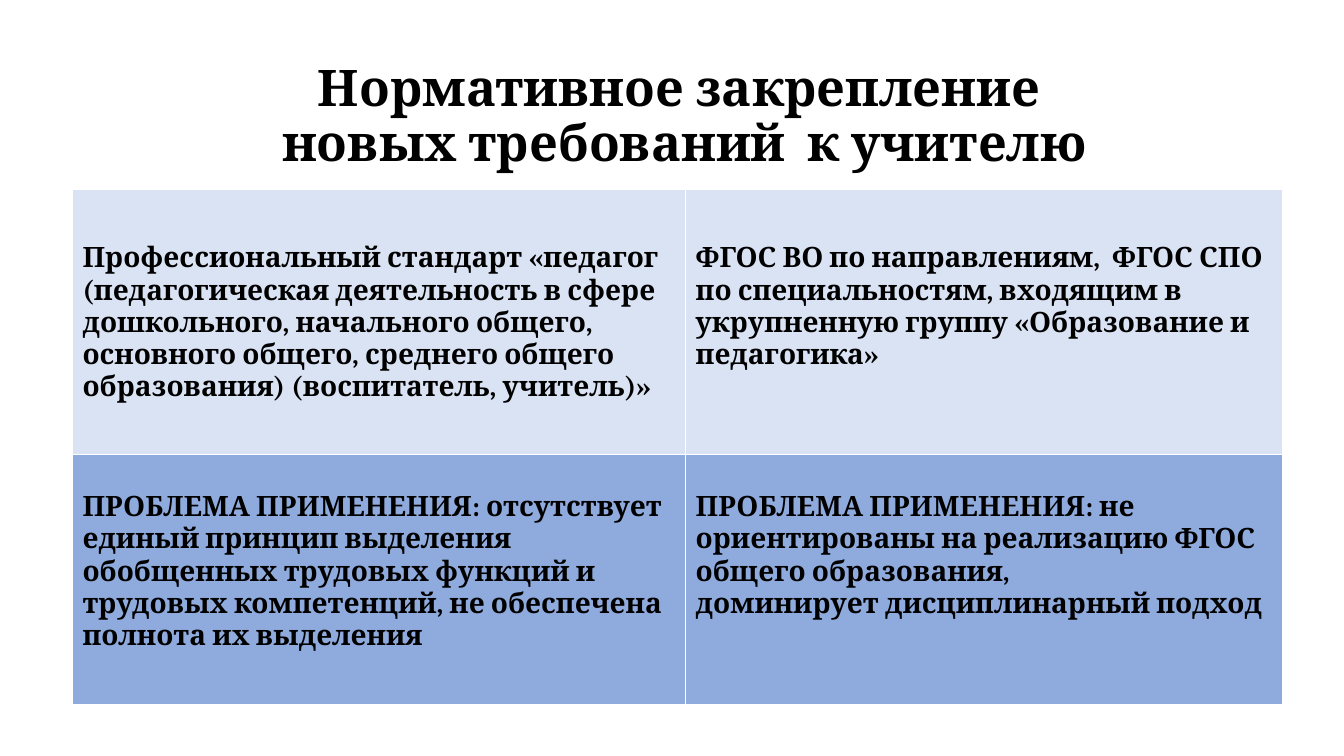
from lxml import etree
from pptx import Presentation
from pptx.dml.color import RGBColor
from pptx.enum.text import MSO_ANCHOR, PP_ALIGN
from pptx.oxml.ns import qn
from pptx.util import Pt

PX = 9525  # EMU per px, 96 px to the inch
CENTER, LEFT = PP_ALIGN.CENTER, PP_ALIGN.LEFT
MIDDLE, TOP = MSO_ANCHOR.MIDDLE, MSO_ANCHOR.TOP
FONT = "Cambria"
BLACK, WHITE = "000000", "FFFFFF"

TITLE = "Нормативное закрепление \vновых требований  к учителю"
COL_WIDTHS = [584, 569]
# Row: height, space above the text, fill, cells as lists of paragraphs
ROWS = [
    (253, 51, "DAE3F3", [
        ["Профессиональный стандарт «педагог (педагогическая деятельность "
         "в сфере дошкольного, начального общего, основного общего, "
         "среднего общего образования) (воспитатель, учитель)»"],
        ["ФГОС ВО по направлениям,  ФГОС СПО по специальностям, входящим "
         "в укрупненную группу «Образование и педагогика»"],
    ]),
    (238, 35, "8FAADC", [
        ["ПРОБЛЕМА ПРИМЕНЕНИЯ: отсутствует единый принцип выделения "
         "обобщенных трудовых функций и трудовых компетенций, "
         "не обеспечена полнота их выделения"],
        ["ПРОБЛЕМА ПРИМЕНЕНИЯ: не ориентированы на реализацию ФГОС "
         "общего образования,",
         "доминирует дисциплинарный подход"],
    ]),
]


def px(n):
    return n * PX


def rgb(value):
    return RGBColor.from_string(value)


def write(tf, paragraphs, size=20, color=BLACK, bold=True, align=LEFT, spacing=1.0):
    tf.word_wrap = True
    for i, text in enumerate(paragraphs):
        p = tf.add_paragraph() if i else tf.paragraphs[0]
        p.text = text
        p.alignment = align
        p.line_spacing = spacing
        for r in p.runs:
            r.font.name = FONT
            r.font.size = Pt(size)
            r.font.bold = bold
            r.font.color.rgb = rgb(color)


def add_title(slide, x, y, w, h):
    tf = slide.shapes.add_textbox(px(x), px(y), px(w), px(h)).text_frame
    tf.vertical_anchor = MIDDLE
    write(tf, [TITLE], size=36, align=CENTER, spacing=0.9)


def set_borders(cell, color=WHITE, width=1):
    tc_pr = cell._tc.get_or_add_tcPr()
    for side in ("a:lnL", "a:lnR", "a:lnT", "a:lnB"):
        ln = etree.SubElement(tc_pr, qn(side), w=str(Pt(width)))
        fill = etree.SubElement(ln, qn("a:solidFill"))
        etree.SubElement(fill, qn("a:srgbClr"), val=color)


def fill_cell(cell, paragraphs, fill, margin_top):
    set_borders(cell)
    cell.fill.solid()
    cell.fill.fore_color.rgb = rgb(fill)
    cell.vertical_anchor = TOP
    cell.margin_top = px(margin_top)
    write(cell.text_frame, paragraphs)


def add_requirements_table(slide, x, y):
    w, h = sum(COL_WIDTHS), sum(row[0] for row in ROWS)
    table = slide.shapes.add_table(len(ROWS), len(COL_WIDTHS),
                                   px(x), px(y), px(w), px(h)).table
    table.first_row = table.horz_banding = False
    for column, width in zip(table.columns, COL_WIDTHS):
        column.width = px(width)
    for row, (height, margin_top, fill, texts) in zip(table.rows, ROWS):
        row.height = px(height)
        for cell, paragraphs in zip(row.cells, texts):
            fill_cell(cell, paragraphs, fill, margin_top)


def main():
    prs = Presentation()
    prs.slide_width, prs.slide_height = px(1280), px(720)
    slide = prs.slides.add_slide(prs.slide_layouts[6])

    # Heading
    add_title(slide, 220, 52, 864, 120)
    # Standards above, problems of applying them below
    add_requirements_table(slide, 69, 180)

    prs.save("out.pptx")


if __name__ == "__main__":
    main()
